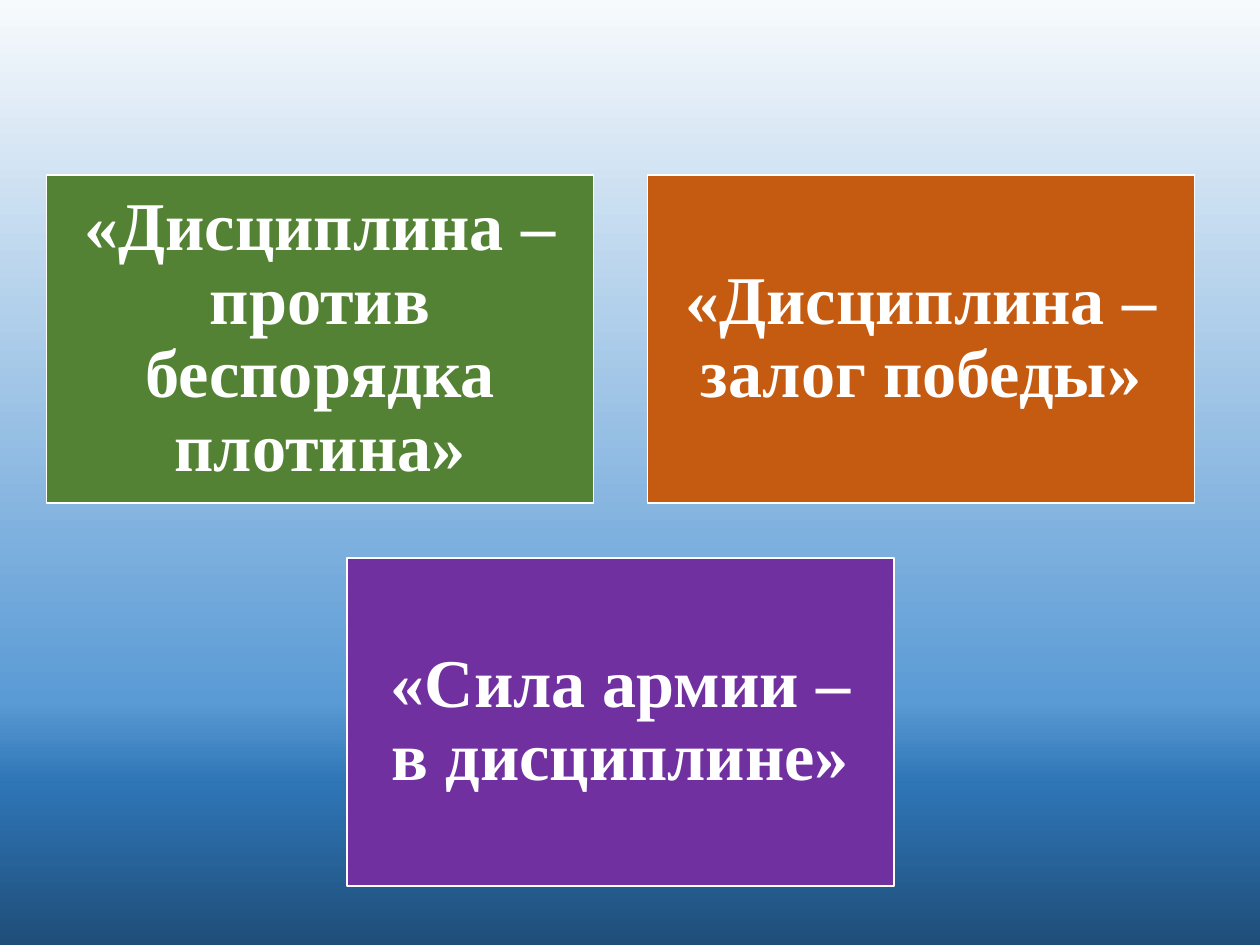
from dataclasses import dataclass

from lxml.etree import SubElement
from pptx import Presentation
from pptx.dml.color import RGBColor
from pptx.enum.shapes import MSO_SHAPE as Preset
from pptx.enum.text import MSO_ANCHOR as Anchor, PP_ALIGN as Align
from pptx.oxml.ns import qn
from pptx.slide import Slide
from pptx.util import Inches, Pt


@dataclass(frozen=True)
class Theme:
    font: str = "Times New Roman"
    motto_size: int = 39
    white: str = "FFFFFF"
    green: str = "548235"
    orange: str = "C55A11"
    purple: str = "7030A0"
    sky: tuple = ((0, "F7FAFD"), (74, "5B9BD5"), (83, "2E75B6"), (100, "1F4E79"))


@dataclass(frozen=True)
class Motto:
    """A motto card; column and row count in whole or half grid steps."""
    wording: str
    color: str
    column: float
    row: int


THEME = Theme()
LEFT, TOP = 0.37, 1.39
CARD_WIDTH, CARD_HEIGHT = 4.34, 2.6
COLUMN_STEP, ROW_STEP = CARD_WIDTH + 0.43, CARD_HEIGHT + 0.44
MOTTOS = (
    Motto("«Дисциплина – против беспорядка плотина»", THEME.green, 0, 0),
    Motto("«Дисциплина – залог победы»", THEME.orange, 1, 0),
    Motto("«Сила армии – в дисциплине»", THEME.purple, 0.5, 1),
)
FRAME_FORMAT = {
    "word_wrap": True,
    "vertical_anchor": Anchor.MIDDLE,
    **{f"margin_{side}": Inches(0.16) for side in ("left", "top", "right", "bottom")},
}
PARAGRAPH_FORMAT = {"alignment": Align.CENTER, "line_spacing": 0.9}
FONT_FORMAT = {"name": THEME.font, "size": Pt(THEME.motto_size), "bold": True}


def apply_format(target: object, values: dict) -> None:
    for attribute, value in values.items():
        setattr(target, attribute, value)


def paint_background(slide: Slide) -> None:
    """Fill the slide from top to bottom with the stops of the theme's sky."""
    fill = slide.background.fill
    fill.gradient()
    fill.gradient_angle = 270
    stops = slide.element.find(f".//{qn('a:gsLst')}")
    for stop in list(stops):
        stops.remove(stop)
    for percent, color in THEME.sky:
        stop = SubElement(stops, qn("a:gs"), pos=str(percent * 1000))
        SubElement(stop, qn("a:srgbClr"), val=color)


def draw_motto(slide: Slide, motto: Motto) -> None:
    card = slide.shapes.add_shape(
        Preset.RECTANGLE,
        Inches(LEFT + motto.column * COLUMN_STEP),
        Inches(TOP + motto.row * ROW_STEP),
        Inches(CARD_WIDTH),
        Inches(CARD_HEIGHT),
    )
    card.shadow.inherit = False
    card.fill.solid()
    card.fill.fore_color.rgb = RGBColor.from_string(motto.color)
    card.line.color.rgb = RGBColor.from_string(THEME.white)
    card.line.width = Pt(1)

    frame = card.text_frame
    apply_format(frame, FRAME_FORMAT)
    paragraph = frame.paragraphs[0]
    apply_format(paragraph, PARAGRAPH_FORMAT)
    wording = paragraph.add_run()
    wording.text = motto.wording
    apply_format(wording.font, FONT_FORMAT)
    wording.font.color.rgb = RGBColor.from_string(THEME.white)


def main() -> None:
    deck = Presentation()
    deck.slide_width, deck.slide_height = Inches(10), Inches(7.5)
    slide = deck.slides.add_slide(deck.slide_layouts[6])
    paint_background(slide)
    for motto in MOTTOS:
        draw_motto(slide, motto)
    deck.save("out.pptx")


if __name__ == "__main__":
    main()
